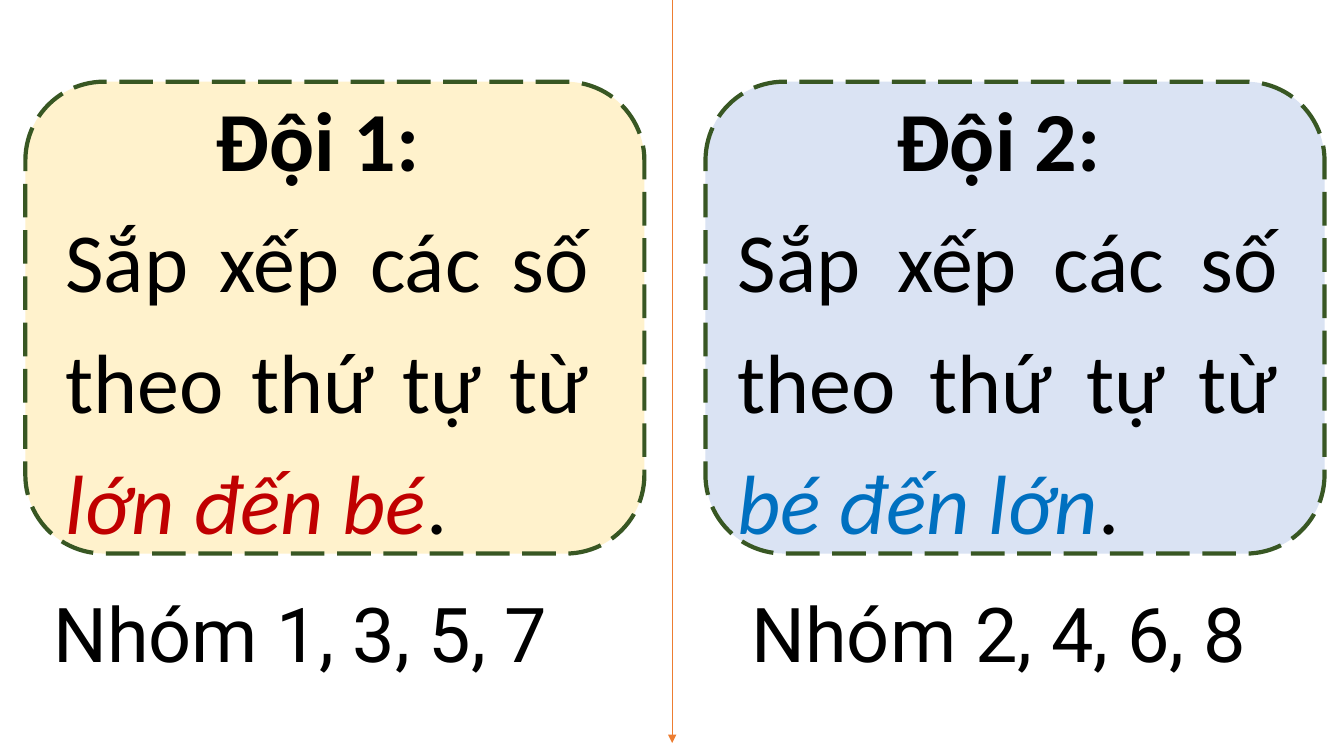
from lxml.etree import SubElement
from pptx import Presentation
from pptx.dml.color import RGBColor
from pptx.enum.dml import MSO_LINE_DASH_STYLE as Dash
from pptx.enum.shapes import MSO_CONNECTOR as Connector, MSO_SHAPE as Shape
from pptx.enum.text import MSO_AUTO_SIZE as AutoSize, PP_ALIGN as Align
from pptx.oxml.ns import qn
from pptx.util import Cm, Pt

BLACK = "000000"
TASK = "Sắp xếp các số theo thứ tự từ "
TEAMS = [
    {"name": "Đội 1: ", "order": "lớn đến bé", "groups": "Nhóm 1, 3, 5, 7",
     "fill": "FFF2CC", "accent": "C00000",
     "card_left": 0.64, "text_left": 1.4, "text_width": 13.69, "groups_left": 1.09},
    {"name": "Đội 2: ", "order": "bé đến lớn", "groups": "Nhóm 2, 4, 6, 8",
     "fill": "DAE3F3", "accent": "0070C0",
     "card_left": 17.78, "text_left": 18.34, "text_width": 14.12, "groups_left": 18.69},
]


def color(hex_text):
    return RGBColor.from_string(hex_text)


def add_span(para, text, hex_color=BLACK, **font_format):
    span = para.add_run()
    span.text = text
    span.font.color.rgb = color(hex_color)
    settings = {"name": "Calibri", "size": Pt(60), **font_format}
    for key, value in settings.items():
        setattr(span.font, key, value)


def add_text_frame(page, left, top, width, height):
    box = page.shapes.add_textbox(Cm(left), Cm(top), Cm(width), Cm(height))
    frame = box.text_frame
    frame.word_wrap = True
    frame.auto_size = AutoSize.SHAPE_TO_FIT_TEXT
    return frame


def add_card(page, team):
    card = page.shapes.add_shape(Shape.ROUNDED_RECTANGLE, Cm(team["card_left"]),
                                 Cm(2.06), Cm(15.6), Cm(11.89))
    card.shadow.inherit = False
    card.fill.solid()
    card.fill.fore_color.rgb = color(team["fill"])
    card.line.color.rgb = color("385723")
    card.line.width = Pt(3)
    card.line.dash_style = Dash.LONG_DASH


def add_task(page, team):
    frame = add_text_frame(page, team["text_left"], 1.57, team["text_width"], 12.37)
    heading, task = frame.paragraphs[0], frame.add_paragraph()
    for para, alignment in ((heading, Align.CENTER), (task, Align.JUSTIFY)):
        para.alignment = alignment
        para.line_spacing = 1.2
    add_span(heading, team["name"], bold=True)
    add_span(task, TASK)
    add_span(task, team["order"], team["accent"], italic=True)
    add_span(task, ".")


def add_groups(page, team):
    frame = add_text_frame(page, team["groups_left"], 14.66, 14.68, 2.57)
    add_span(frame.paragraphs[0], team["groups"], name="Roboto", size=Pt(54))


def add_divider(page):
    divider = page.shapes.add_connector(Connector.STRAIGHT, Cm(16.94), Cm(0),
                                        Cm(16.94), Cm(18.72))
    divider.line.color.rgb = color("ED7D31")
    divider.line.width = Pt(0.5)
    SubElement(divider.line._get_or_add_ln(), qn("a:tailEnd"), type="triangle")
    SubElement(divider._element.spPr, qn("a:effectLst"))


def main():
    deck = Presentation()
    deck.slide_width, deck.slide_height = Cm(33.87), Cm(19.05)
    page = deck.slides.add_slide(deck.slide_layouts[6])
    for team in TEAMS:
        add_card(page, team)
        add_task(page, team)
    add_divider(page)
    for team in TEAMS:
        add_groups(page, team)
    deck.save("out.pptx")


if __name__ == "__main__":
    main()
